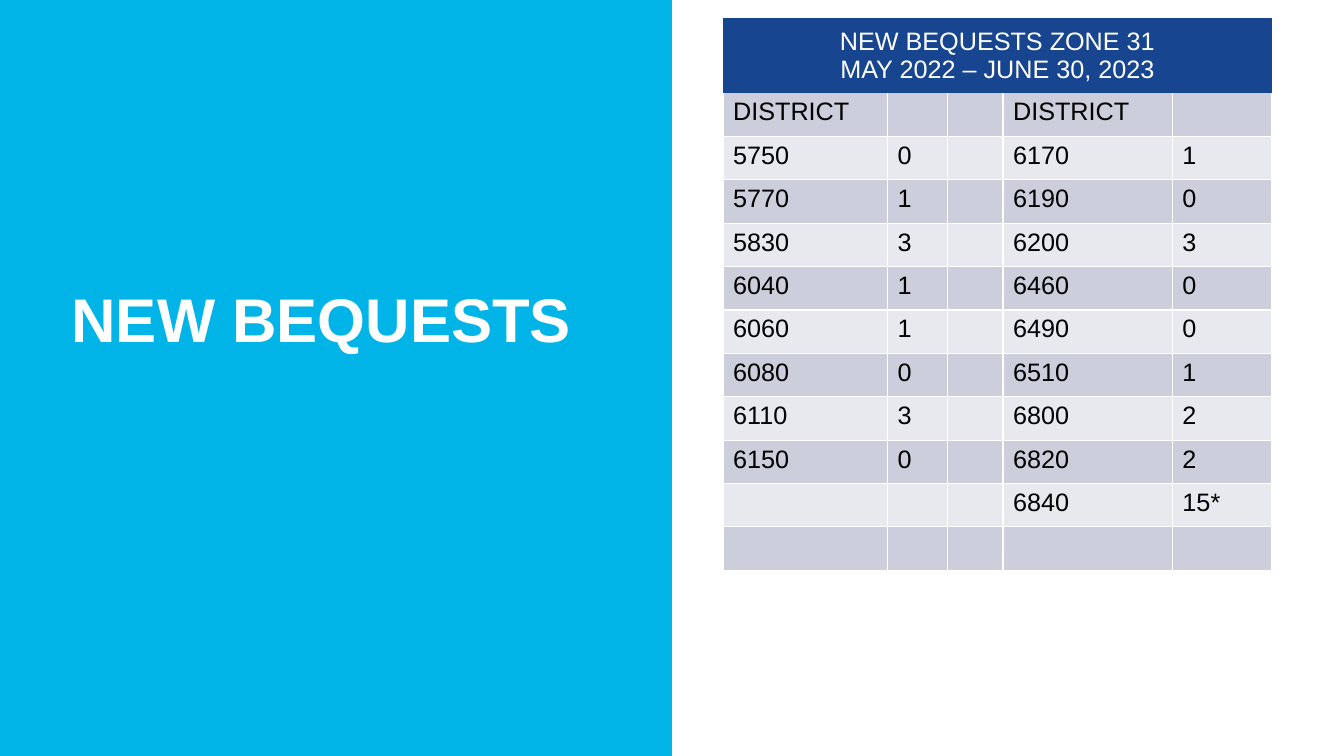
"""Build the slide of new bequests by district."""
from lxml import etree
from pptx import Presentation
from pptx.dml.color import RGBColor
from pptx.enum import shapes, text
from pptx.oxml import ns
from pptx.util import Pt

CYAN = RGBColor(0x01, 0xB4, 0xE7)
NAVY = RGBColor(0x17, 0x45, 0x8F)
DARK = RGBColor(0xCC, 0xCF, 0xDB)
LIGHT = RGBColor(0xE8, 0xE9, 0xEE)
WHITE = RGBColor(0xFF, 0xFF, 0xFF)
BLACK = RGBColor(0, 0, 0)

HEAD = ["NEW BEQUESTS ZONE 31", "MAY 2022 – JUNE 30, 2023"]
ROWS = [
    ["DISTRICT", "", "", "DISTRICT", ""],
    ["5750", "0", "", "6170", "1"],
    ["5770", "1", "", "6190", "0"],
    ["5830", "3", "", "6200", "3"],
    ["6040", "1", "", "6460", "0"],
    ["6060", "1", "", "6490", "0"],
    ["6080", "0", "", "6510", "1"],
    ["6110", "3", "", "6800", "2"],
    ["6150", "0", "", "6820", "2"],
    ["", "", "", "6840", "15*"],
    ["", "", "", "", ""],
]
WIDTHS = [117.5, 43, 39.5, 121, 71]


def write(para, words, size, color, bold=False):
    run = para.add_run()
    run.text = words
    font = run.font
    font.name, font.size, font.bold = "Arial", Pt(size), bold
    font.color.rgb = color


def edge(cell, side, shown):
    props = cell._tc.get_or_add_tcPr()
    line = etree.SubElement(props, ns.qn("a:ln" + side), w=str(Pt(1)))
    if shown:
        fill = etree.SubElement(line, ns.qn("a:solidFill"))
        etree.SubElement(fill, ns.qn("a:srgbClr"), val=str(WHITE))
    else:
        etree.SubElement(line, ns.qn("a:noFill"))


deck = Presentation()
deck.slide_width, deck.slide_height = Pt(960), Pt(540)
slide = deck.slides.add_slide(deck.slide_layouts[6])

panel = slide.shapes.add_shape(shapes.MSO_SHAPE.RECTANGLE, 0, 0, Pt(480), Pt(540))
panel.shadow.inherit = False
panel.fill.solid()
panel.fill.fore_color.rgb = CYAN
panel.line.fill.background()

title = slide.shapes.add_textbox(Pt(44), Pt(168.5), Pt(392), Pt(89.5)).text_frame
title.word_wrap = True
title.vertical_anchor = text.MSO_ANCHOR.BOTTOM
title.paragraphs[0].line_spacing = 0.9
write(title.paragraphs[0], "NEW BEQUESTS", 44, WHITE, True)

frame = slide.shapes.add_table(
    len(ROWS) + 1, len(WIDTHS), Pt(516.5), Pt(13), Pt(sum(WIDTHS)), Pt(394.5))
table = frame.table
table.first_row = table.horz_banding = False
for col, width in zip(table.columns, WIDTHS):
    col.width = Pt(width)
for row in table.rows:
    row.height = Pt(31)
table.rows[0].height = Pt(53.5)

for r, row in enumerate(table.rows):
    for c, cell in enumerate(row.cells):
        for side in "LRTB":
            edge(cell, side, r > 1 or (r == 1 and side != "T"))
        cell.fill.solid()
        cell.fill.fore_color.rgb = NAVY if r == 0 else DARK if r % 2 else LIGHT
        if r and ROWS[r - 1][c]:
            write(cell.text_frame.paragraphs[0], ROWS[r - 1][c], 18, BLACK)

head = table.cell(0, 0)
head.merge(table.cell(0, len(WIDTHS) - 1))
head.vertical_anchor = text.MSO_ANCHOR.MIDDLE
head.text_frame.add_paragraph()
for para, words in zip(head.text_frame.paragraphs, HEAD):
    para.alignment = text.PP_ALIGN.CENTER
    write(para, words, 18, WHITE)

deck.save("out.pptx")
